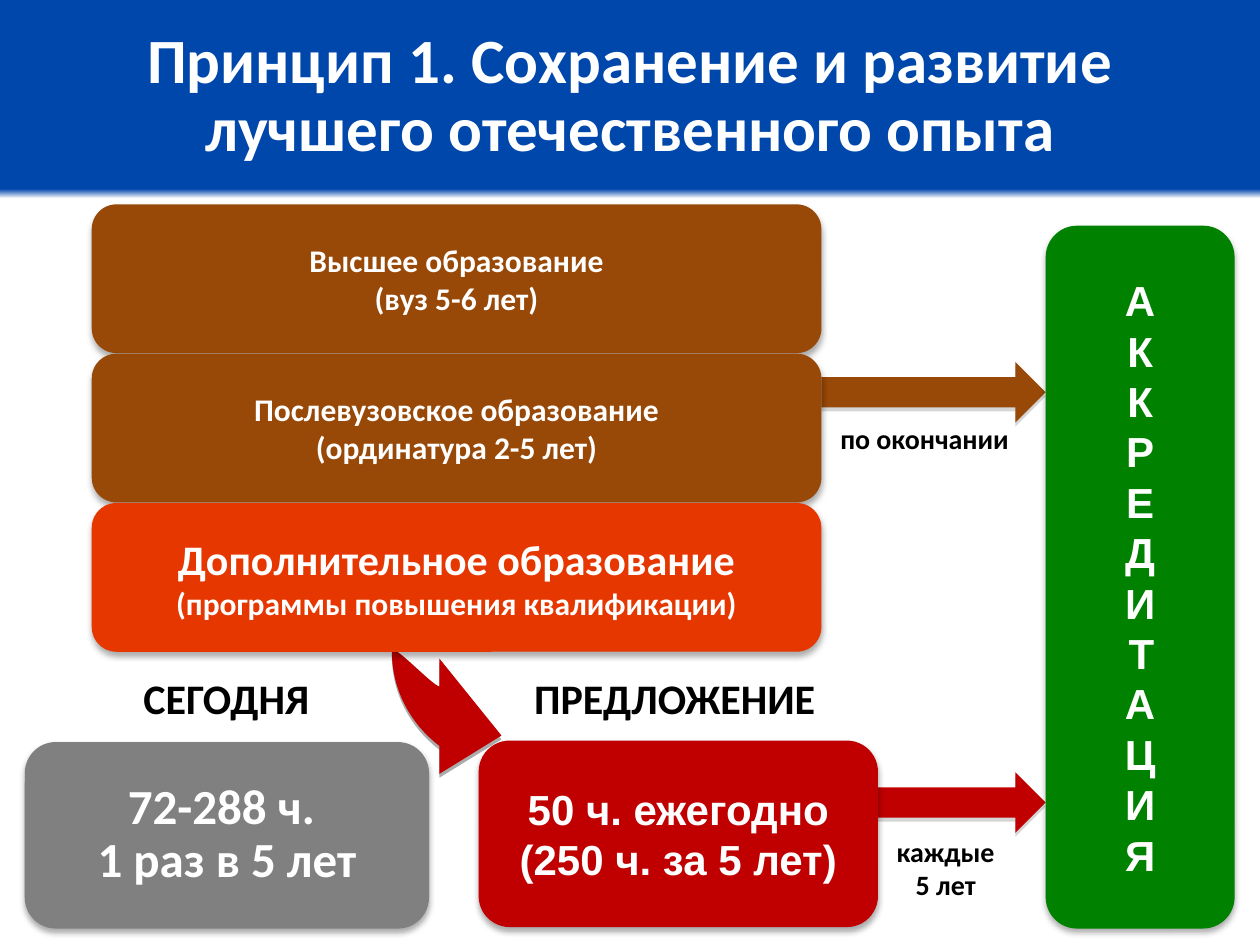
from dataclasses import dataclass

from lxml import etree
from pptx import Presentation
from pptx.dml.color import RGBColor
from pptx.enum.shapes import MSO_SHAPE
from pptx.enum.text import MSO_ANCHOR, MSO_AUTO_SIZE, PP_ALIGN
from pptx.oxml.ns import qn
from pptx.util import Cm, Pt

ROUNDED = MSO_SHAPE.ROUNDED_RECTANGLE
ARROW = MSO_SHAPE.RIGHT_ARROW
MIDDLE = MSO_ANCHOR.MIDDLE
GROW = MSO_AUTO_SIZE.SHAPE_TO_FIT_TEXT
LEFT, CENTER = PP_ALIGN.LEFT, PP_ALIGN.CENTER


@dataclass(frozen=True)
class Theme:
    blue: str = "0047AB"
    white: str = "FFFFFF"
    black: str = "000000"
    gray: str = "808080"
    brown: str = "984807"
    orange: str = "E63700"
    red: str = "C00000"
    green: str = "008200"
    body: str = "Calibri"
    accent: str = "Arial"
    title: int = 36
    large: int = 28
    medium: int = 24
    small: int = 18
    note: int = 16


THEME = Theme()


def add_element(parent, tag, **attributes):
    element = etree.SubElement(parent, qn(tag))
    for name, value in attributes.items():
        element.set(name, str(value))
    return element


def paint_background(slide):
    """Blue band on top that fades quickly into white."""
    fill = slide.background.fill
    fill.gradient()
    fill.gradient_angle = 270
    stops = fill.gradient_stops[0]._gs.getparent()
    for stop in list(stops):
        stops.remove(stop)
    for percent, color in ((0, THEME.blue), (20, THEME.blue),
                           (21, THEME.white), (100, THEME.white)):
        stop = add_element(stops, "a:gs", pos=percent * 1000)
        add_element(stop, "a:srgbClr", val=color)


def style_shape(shape, color, shadow_color=THEME.black, blur=0):
    """Plain fill without outline, with a soft shadow below."""
    shape.fill.solid()
    shape.fill.fore_color.rgb = RGBColor.from_string(color)
    shape.line.fill.background()
    shape.shadow.inherit = False
    effects = shape._element.spPr.find(qn("a:effectLst"))
    shadow = add_element(effects, "a:outerShdw", blurRad=Pt(blur), dist=Pt(2.2),
                         dir=90 * 60000, rotWithShape=0)
    shade = add_element(shadow, "a:srgbClr", val=shadow_color)
    add_element(shade, "a:alpha", val=32000)


def write_text(shape, text, sizes, color, font=THEME.body, align=CENTER, spacing=None):
    """Fill a shape with bold text; sizes holds one size per paragraph."""
    frame = shape.text_frame
    frame.text = text
    for para, size in zip(frame.paragraphs, sizes):
        para.alignment = align
        if spacing:
            para.line_spacing = spacing
        for span in para.runs:
            span.font.name = font
            span.font.size = Pt(size)
            span.font.bold = True
            span.font.color.rgb = RGBColor.from_string(color)


def add_box(slide, left, top, width, height, color, text, sizes, **text_style):
    box = slide.shapes.add_shape(ROUNDED, Cm(left), Cm(top), Cm(width), Cm(height))
    style_shape(box, color, blur=3.5)
    frame = box.text_frame
    frame.word_wrap = True
    frame.vertical_anchor = MIDDLE
    frame.margin_left = frame.margin_right = Cm(0.2)
    frame.margin_top = frame.margin_bottom = Cm(0.1)
    write_text(box, text, sizes, THEME.white, **text_style)
    return box


def add_label(slide, left, top, width, height, text, sizes, align=LEFT):
    label = slide.shapes.add_textbox(Cm(left), Cm(top), Cm(width), Cm(height))
    label.text_frame.word_wrap = False
    label.text_frame.auto_size = GROW
    write_text(label, text, sizes, THEME.black, align=align)


def add_arrow(slide, left, top, right, color):
    arrow = slide.shapes.add_shape(ARROW, Cm(left), Cm(top), Cm(right - left), Cm(1.22))
    style_shape(arrow, color, THEME.gray)


def curve_points(start, first, second, end, steps=16):
    """Points along a cubic curve, without its start."""
    points = []
    for step in range(1, steps + 1):
        t = step / steps
        weights = ((1 - t) ** 3, 3 * t * (1 - t) ** 2, 3 * t ** 2 * (1 - t), t ** 3)
        points.append(tuple(
            sum(weight * value for weight, value in zip(weights, values))
            for values in zip(start, first, second, end)))
    return points


def add_curved_arrow(slide, color):
    tip, inner, tail, outer = (10.11, 14.83), (8.86, 13.84), (7.9, 13.13), (8.86, 15.04)
    outline = [(8.86, 13.28), inner]
    outline += curve_points(inner, (8.71, 13.82), (7.9, 12.93), tail)
    outline += curve_points(tail, (7.9, 13.89), (8.26, 14.58), outer)
    outline.append((8.86, 15.6))
    builder = slide.shapes.build_freeform(Cm(tip[0]), Cm(tip[1]))
    builder.add_line_segments([(Cm(x), Cm(y)) for x, y in outline], close=True)
    style_shape(builder.convert_to_shape(), color)


def add_title(slide, text):
    title = slide.shapes.add_textbox(Cm(0.1), Cm(0.36), Cm(25.2), Cm(3.18))
    title.text_frame.word_wrap = True
    title.text_frame.vertical_anchor = MIDDLE
    write_text(title, text, [THEME.title], THEME.white, spacing=0.9)


def main():
    deck = Presentation()
    deck.slide_width, deck.slide_height = Cm(25.4), Cm(19.05)
    slide = deck.slides.add_slide(deck.slide_layouts[6])
    paint_background(slide)

    # Arrows towards accreditation
    stack_left, stack_width, accreditation_left = 1.85, 14.71, 21.08
    add_arrow(slide, stack_left + stack_width, 7.3, accreditation_left, THEME.brown)
    add_arrow(slide, 17.7, 15.57, accreditation_left, THEME.red)

    add_title(slide, "Принцип 1. Сохранение и развитие\vлучшего отечественного опыта")

    # Today, accreditation and the proposal
    add_box(slide, 0.5, 14.96, 8.15, 3.76, THEME.gray,
            "72-288 ч. \n1 раз в 5 лет", [THEME.large] * 2, spacing=0.9)
    accreditation = add_box(slide, accreditation_left, 4.55, 3.81, 14.17, THEME.green,
                            "АККРЕДИТАЦИЯ", [THEME.medium], font=THEME.accent)
    accreditation.text_frame._txBody.bodyPr.set("vert", "wordArtVert")
    add_box(slide, 9.65, 14.93, 8.05, 3.76, THEME.red,
            "50 ч. ежегодно\n(250 ч. за 5 лет)", [THEME.medium] * 2, font=THEME.accent)
    add_curved_arrow(slide, THEME.red)

    # Stack of education levels
    levels = (
        (THEME.brown, "Высшее образование\v(вуз 5-6 лет)", [THEME.small]),
        (THEME.brown, "Послевузовское образование\v(ординатура 2-5 лет)", [THEME.small]),
        (THEME.orange, "Дополнительное образование\n(программы повышения квалификации)",
         [THEME.medium, THEME.small]),
    )
    for index, (color, text, sizes) in enumerate(levels):
        add_box(slide, stack_left, 4.12 + 3.01 * index, stack_width, 3, color, text, sizes)

    # Captions
    add_label(slide, 2.64, 13.44, 3.89, 1.28, "СЕГОДНЯ", [THEME.medium])
    add_label(slide, 10.52, 13.44, 6.3, 1.28, "ПРЕДЛОЖЕНИЕ", [THEME.medium])
    add_label(slide, 16.69, 8.38, 4.01, 0.94, "по окончании", [THEME.note])
    add_label(slide, 17.78, 16.69, 2.57, 1.63, "каждые\n5 лет", [THEME.note] * 2, CENTER)

    deck.save("out.pptx")


if __name__ == "__main__":
    main()
